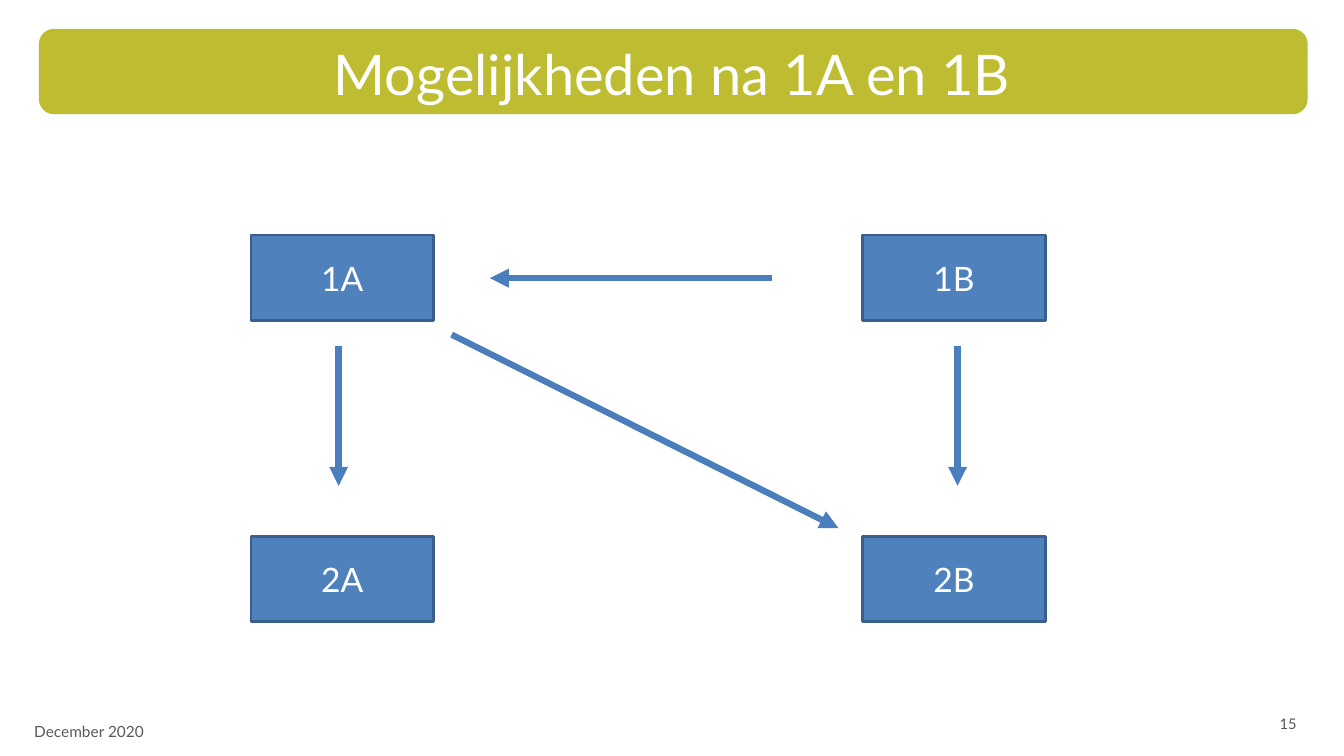
from lxml.etree import SubElement
from pptx import Presentation
from pptx.dml.color import RGBColor
from pptx.enum.shapes import MSO_CONNECTOR, MSO_SHAPE
from pptx.enum.text import MSO_ANCHOR, MSO_AUTO_SIZE, PP_ALIGN
from pptx.oxml.ns import qn
from pptx.util import Pt

COLORS = {
    "banner": "BEBD31",
    "box": "4F81BD",
    "box_edge": "3A5F8C",
    "arrow": "4B7EBC",
    "light": "FFFFFF",
    "footer": "595959",
}


class SlideBuilder:
    font = "Lato"

    def __init__(self, slide):
        self.slide = slide

    def color(self, name):
        return RGBColor.from_string(COLORS[name])

    def set_text(self, shape, text, size, color, align, anchor=MSO_ANCHOR.MIDDLE):
        frame = shape.text_frame
        frame.word_wrap = True
        frame.auto_size = MSO_AUTO_SIZE.NONE
        frame.vertical_anchor = anchor
        paragraph = frame.paragraphs[0]
        paragraph.alignment = align
        run = paragraph.add_run()
        run.text = text
        run.font.name = self.font
        run.font.size = Pt(size)
        run.font.color.rgb = self.color(color)

    def block(self, preset, left, top, width, height, fill, edge):
        shape = self.slide.shapes.add_shape(
            preset, Pt(left), Pt(top), Pt(width), Pt(height))
        shape.shadow.inherit = False
        shape.fill.solid()
        shape.fill.fore_color.rgb = self.color(fill)
        shape.line.color.rgb = self.color(edge)
        shape.line.width = Pt(2)
        return shape

    def title(self, text, left, top, width, height):
        heading = self.slide.shapes.title
        heading.left, heading.top = Pt(left), Pt(top)
        heading.width, heading.height = Pt(width), Pt(height)
        self.set_text(heading, text, 40, "light", PP_ALIGN.CENTER, MSO_ANCHOR.TOP)

    def banner(self, left, top, width, height):
        """Draw the rounded bar directly behind the title."""
        bar = self.block(MSO_SHAPE.ROUNDED_RECTANGLE, left, top, width, height,
                         "banner", "banner")
        self.slide.shapes.title.element.addprevious(bar.element)

    def level_box(self, text, left, top, width, height):
        box = self.block(MSO_SHAPE.RECTANGLE, left, top, width, height,
                         "box", "box_edge")
        self.set_text(box, text, 24, "light", PP_ALIGN.CENTER)

    def arrow(self, start, end):
        route = self.slide.shapes.add_connector(
            MSO_CONNECTOR.STRAIGHT, *map(Pt, start + end))
        route.line.color.rgb = self.color("arrow")
        route.line.width = Pt(4.5)
        properties = route.element.spPr
        SubElement(properties.find(qn("a:ln")), qn("a:tailEnd"), type="triangle")
        SubElement(properties, qn("a:effectLst"))

    def footer(self, text, size, left, top, width, height, align):
        note = self.slide.shapes.add_textbox(
            Pt(left), Pt(top), Pt(width), Pt(height))
        self.set_text(note, text, size, "footer", align)


def main():
    deck = Presentation()
    deck.slide_width, deck.slide_height = Pt(960), Pt(540)
    builder = SlideBuilder(deck.slides.add_slide(deck.slide_layouts[5]))

    builder.title("Mogelijkheden na 1A en 1B", 48, 24.5, 864, 49.7)
    builder.banner(28.8, 21.6, 904.3, 59)

    columns = {"A": 179.3, "B": 616.3}
    rows = {"1": 167.8, "2": 383}
    for year, top in rows.items():
        for track, left in columns.items():
            builder.level_box(year + track, left, top, 130.3, 61.2)

    for x in (241.9, 684):
        builder.arrow((x, 247), (x, 347))
    builder.arrow((551.5, 198.7), (349.9, 198.7))
    builder.arrow((322.6, 239), (599, 377.3))

    builder.footer("December 2020", 11, 17.3, 508.3, 245.5, 28.8, PP_ALIGN.LEFT)
    builder.footer("15", 10.5, 711.4, 502.6, 221.8, 28.8, PP_ALIGN.RIGHT)
    deck.save("out.pptx")


if __name__ == "__main__":
    main()
